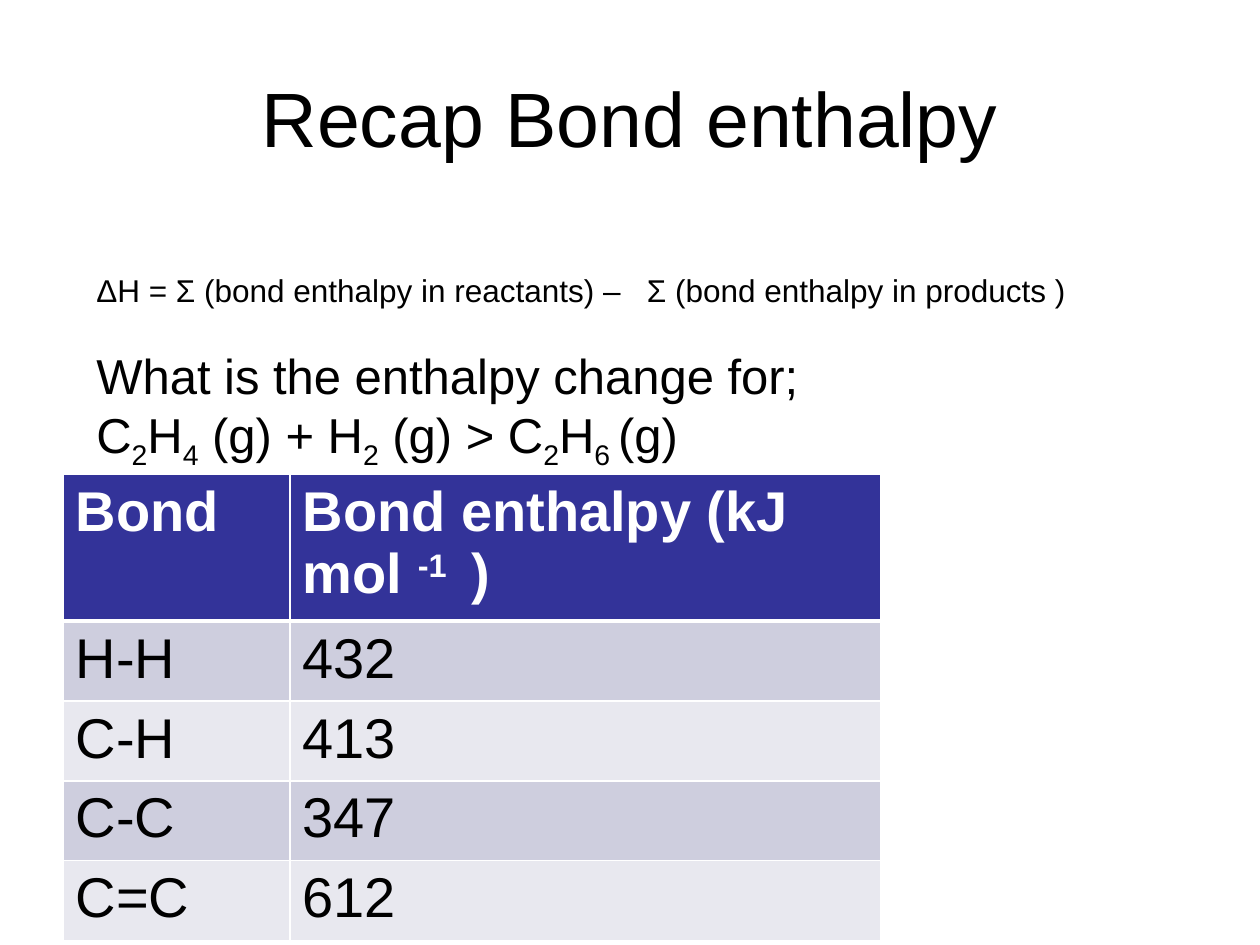
from dataclasses import dataclass

from lxml.etree import SubElement
from pptx import Presentation
from pptx.dml.color import RGBColor
from pptx.enum.text import MSO_ANCHOR, MSO_AUTO_SIZE, PP_ALIGN
from pptx.oxml.ns import qn
from pptx.util import Pt

EMU_PER_PX = 914400 / 126


@dataclass(frozen=True)
class Theme:
    font: str = "Arial"
    ink: str = "000000"
    white: str = "FFFFFF"
    header: str = "333399"
    bands: tuple = ("CECEDE", "E8E8EF")
    title: int = 44
    formula: int = 18
    question: int = 28
    table: int = 32
    sub: int = -25
    sup: int = 30


THEME = Theme()

EQUATION = [
    ("C", 0), ("2", THEME.sub), ("H", 0), ("4", THEME.sub),
    (" (g) + H", 0), ("2", THEME.sub), (" (g) > C", 0), ("2", THEME.sub),
    ("H", 0), ("6 ", THEME.sub), ("(g)", 0),
]
HEADER = [
    [("Bond", 0)],
    [("Bond enthalpy (kJ mol ", 0), ("-1 ", THEME.sup), (" )", 0)],
]
BONDS = [("H-H", 432), ("C-H", 413), ("C-C", 347), ("C=C", 612)]


def px(n):
    return round(n * EMU_PER_PX)


def rgb(color):
    return RGBColor.from_string(color)


def add_runs(p, parts, size, color=THEME.ink, bold=False):
    """Write (text, baseline percent) parts into a paragraph."""
    for text, baseline in parts:
        r = p.add_run()
        r.text = text
        r.font.name = THEME.font
        r.font.size = Pt(size)
        r.font.bold = bold
        r.font.color.rgb = rgb(color)
        if baseline:
            r.font._element.set("baseline", str(baseline * 1000))


def set_title(slide, text, x, y, w, h):
    s = slide.shapes.title
    s.left, s.top, s.width, s.height = px(x), px(y), px(w), px(h)
    tf = s.text_frame
    tf.vertical_anchor = MSO_ANCHOR.MIDDLE
    p = tf.paragraphs[0]
    p.alignment = PP_ALIGN.CENTER
    add_runs(p, [(text, 0)], THEME.title)


def add_text(slide, lines, x, y, w, h):
    """Add a text box from (parts, size, space before) lines."""
    tf = slide.shapes.add_textbox(px(x), px(y), px(w), px(h)).text_frame
    tf.word_wrap = True
    tf.auto_size = MSO_AUTO_SIZE.SHAPE_TO_FIT_TEXT
    for i, (parts, size, gap) in enumerate(lines):
        p = tf.add_paragraph() if i else tf.paragraphs[0]
        p.space_before = Pt(gap)
        add_runs(p, parts, size)


def set_borders(cell, bottom):
    tc_pr = cell._tc.get_or_add_tcPr()
    widths = {"a:lnL": 1, "a:lnR": 1, "a:lnT": 1, "a:lnB": bottom}
    for i, (tag, width) in enumerate(widths.items()):
        ln = SubElement(tc_pr, qn(tag), w=str(Pt(width)))
        fill = SubElement(ln, qn("a:solidFill"))
        SubElement(fill, qn("a:srgbClr"), val=THEME.white)
        tc_pr.insert(i, ln)  # borders come before the cell fill


def add_bond_table(slide, x, y, col_widths, header_height, row_height):
    rows = HEADER_AND_BODY = [HEADER] + [
        [[(bond, 0)], [(str(value), 0)]] for bond, value in BONDS
    ]
    heights = [header_height] + [row_height] * len(BONDS)
    table = slide.shapes.add_table(
        len(rows), len(col_widths), px(x), px(y),
        px(sum(col_widths)), px(sum(heights)),
    ).table
    for column, width in zip(table.columns, col_widths):
        column.width = px(width)
    for i, (row, height) in enumerate(zip(rows, heights)):
        table.rows[i].height = px(height)
        is_header = i == 0
        fill = THEME.header if is_header else THEME.bands[(i - 1) % 2]
        color = THEME.white if is_header else THEME.ink
        for j, parts in enumerate(row):
            cell = table.cell(i, j)
            cell.fill.solid()
            cell.fill.fore_color.rgb = rgb(fill)
            add_runs(cell.text_frame.paragraphs[0], parts, THEME.table,
                     color, bold=is_header)
            # A heavier rule separates the header from the first row
            set_borders(cell, bottom=3 if is_header else 1)


def main():
    prs = Presentation()
    prs.slide_width, prs.slide_height = px(1260), px(945)
    slide = prs.slides.add_slide(prs.slide_layouts[5])

    # Title
    set_title(slide, "Recap Bond enthalpy", 63, 38, 1134, 157)

    # Formula and question
    formula = ("ΔH = Σ (bond enthalpy in reactants) –   "
               "Σ (bond enthalpy in products )")
    add_text(slide, [
        ([(formula, 0)], THEME.formula, 0),
        ([("What is the enthalpy change for;", 0)], THEME.question, 21),
        (EQUATION, THEME.question, 0),
    ], 84, 265, 1052, 208)

    # Bond enthalpies
    add_bond_table(slide, 63, 474, (227, 591), 147, 79)

    prs.save("out.pptx")


if __name__ == "__main__":
    main()
